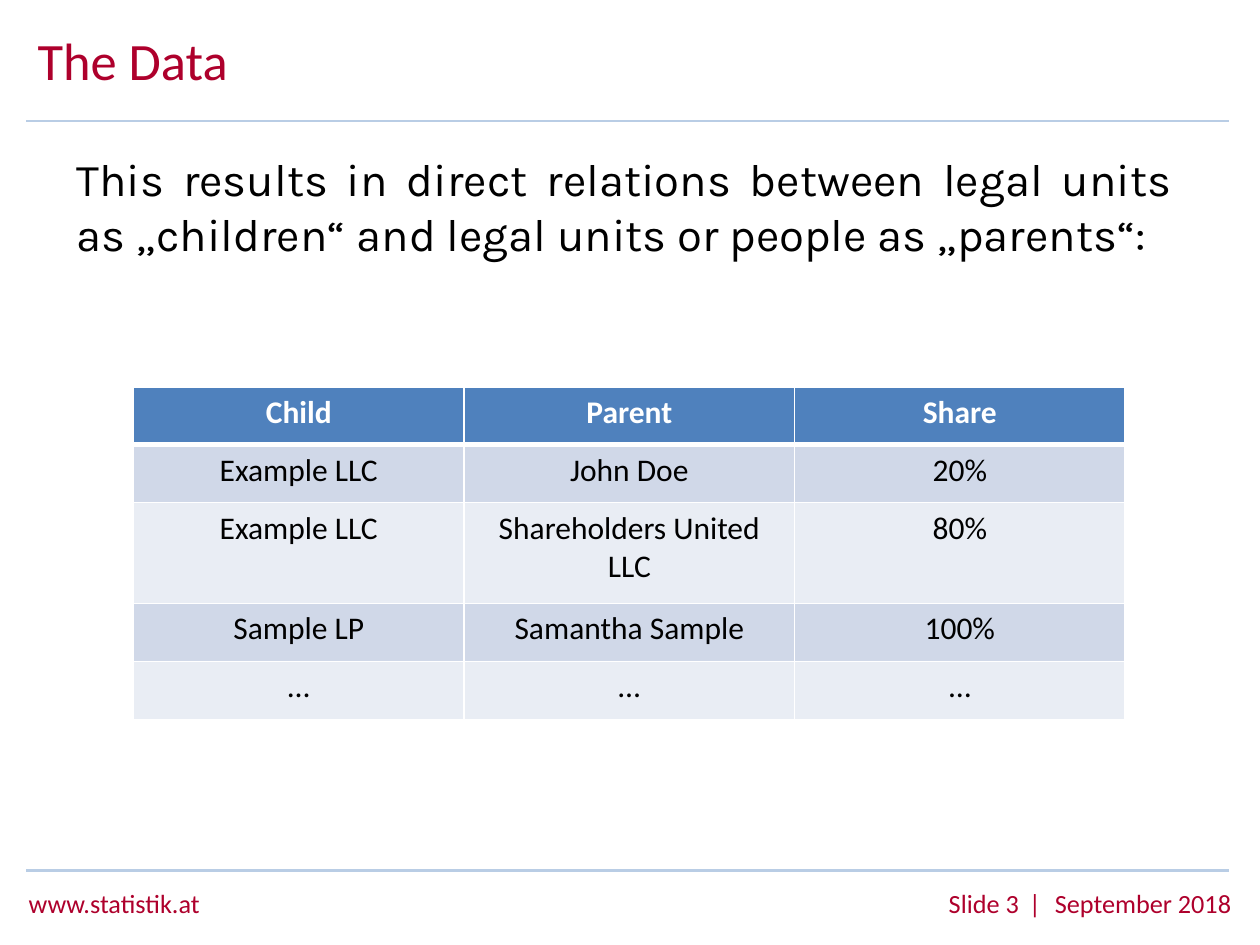
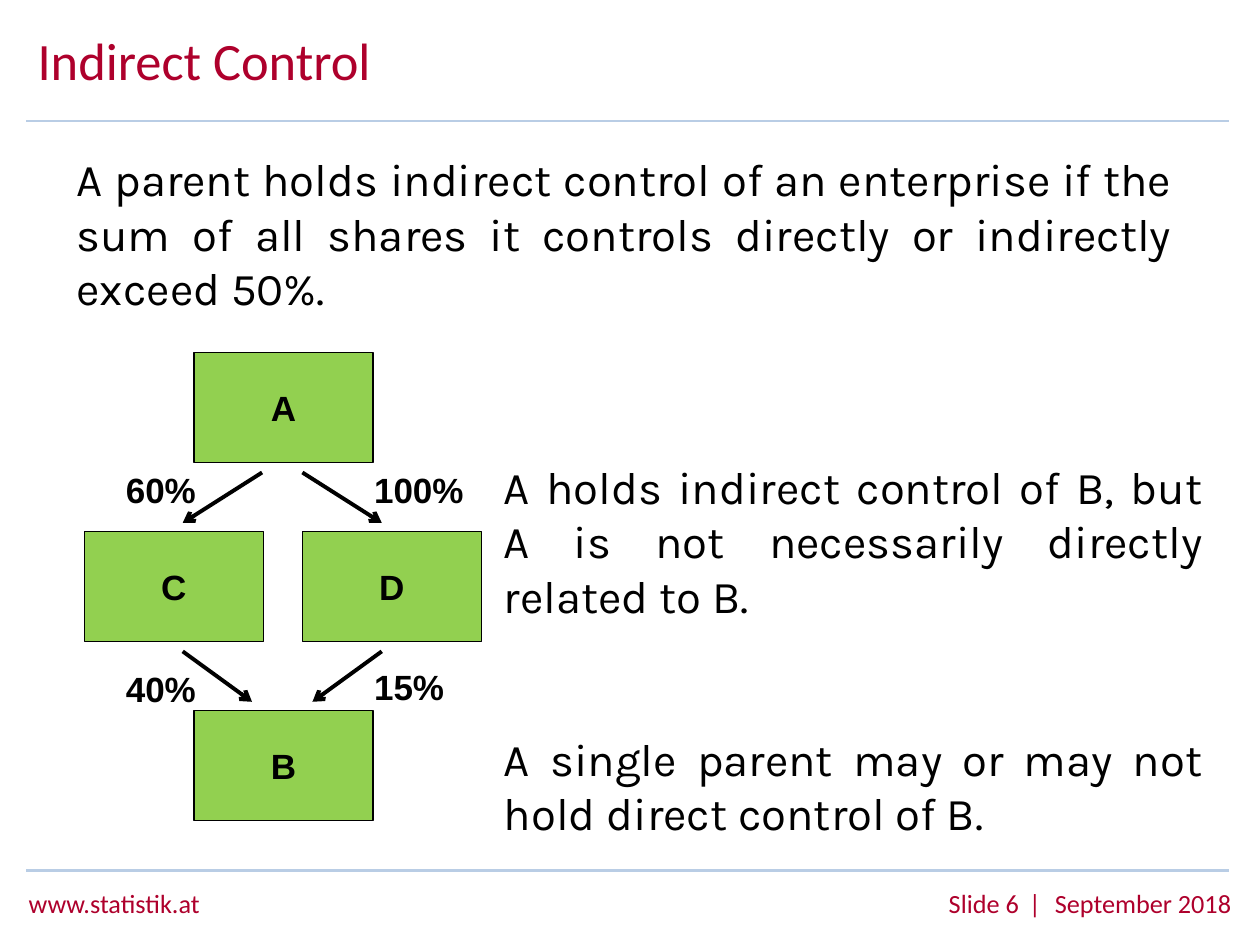
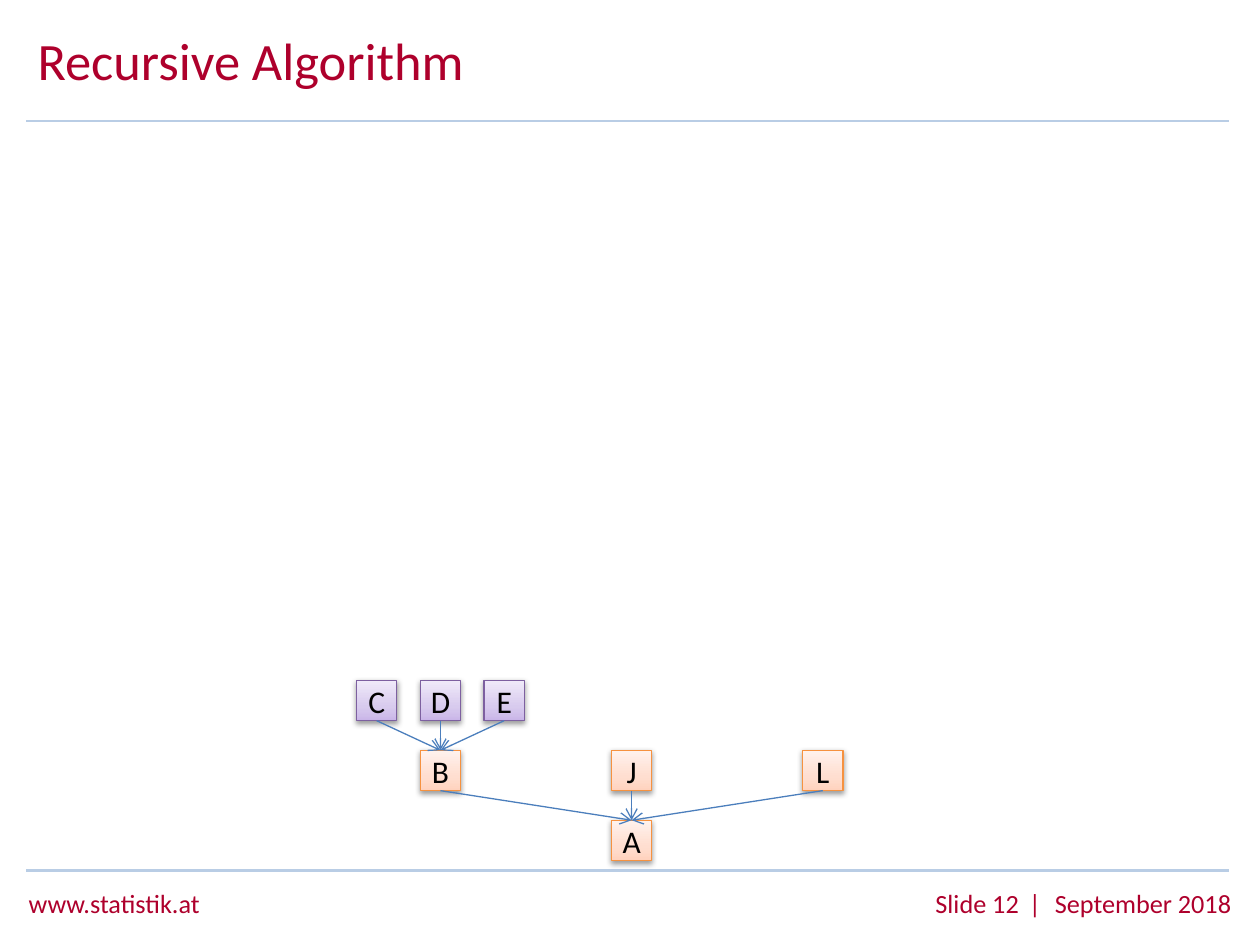
from lxml.etree import SubElement
from pptx import Presentation
from pptx.dml.color import RGBColor
from pptx.enum.shapes import MSO_CONNECTOR, MSO_SHAPE
from pptx.enum.text import MSO_ANCHOR, PP_ALIGN
from pptx.oxml import parse_xml
from pptx.oxml.ns import nsdecls, qn
from pptx.util import Inches, Pt

CRIMSON = RGBColor(0xAE, 0x00, 0x2C)
RULE_BLUE = RGBColor(0xB9, 0xCD, 0xE5)
BLACK = RGBColor(0x00, 0x00, 0x00)
WHITE = RGBColor(0xFF, 0xFF, 0xFF)
HEADER_BLUE = RGBColor(0x4F, 0x81, 0xBD)
BANDS = (RGBColor(0xD0, 0xD8, 0xE8), RGBColor(0xE9, 0xED, 0xF4))
GREEN = RGBColor(0x92, 0xD0, 0x50)
ARROW_BLUE = RGBColor(0x4B, 0x7E, 0xBC)
ORANGE_LINE = RGBColor(0xF6, 0x92, 0x40)
ORANGE_STOPS = (
    RGBColor(0xFF, 0xD2, 0xBD),
    RGBColor(0xFF, 0xDE, 0xD0),
    RGBColor(0xFF, 0xF2, 0xED),
)
PURPLE_LINE = RGBColor(0x7D, 0x60, 0xA0)
PURPLE_STOPS = (
    RGBColor(0xC9, 0xB5, 0xE8),
    RGBColor(0xD8, 0xCB, 0xEE),
    RGBColor(0xF0, 0xEA, 0xF9),
)
STOP_POSITIONS = (0, 35000, 100000)


def write_text(frame, text, *, size, font="Calibri", color=BLACK, bold=False,
               align=PP_ALIGN.LEFT, gap=0, line=None):
    """Fill a text frame, one paragraph per line of text, in one format."""
    for index, content in enumerate(text.split("\n")):
        paragraph = frame.add_paragraph() if index else frame.paragraphs[0]
        paragraph.alignment = align
        if index:
            paragraph.space_before = Pt(gap)
        if line:
            paragraph.line_spacing = Pt(line)
        run = paragraph.add_run()
        run.text = content
        run.font.size = Pt(size)
        run.font.name = font
        run.font.bold = bold
        run.font.color.rgb = color


def add_text(slide, box, text, *, anchor=MSO_ANCHOR.TOP, **style):
    """Add a wrapping text box at the given left, top, width and height."""
    shape = slide.shapes.add_textbox(*map(Inches, box))
    shape.text_frame.word_wrap = True
    shape.text_frame.vertical_anchor = anchor
    write_text(shape.text_frame, text, **style)
    return shape


def add_body(slide, box, text, gap=0):
    """Add justified body copy."""
    add_text(slide, box, text, size=26, font="Karla", align=PP_ALIGN.JUSTIFY, gap=gap)


def add_line(slide, start, end, color, weight, arrow=False):
    """Add a straight line, with an open arrowhead at its end if wanted."""
    connector = slide.shapes.add_connector(
        MSO_CONNECTOR.STRAIGHT, *map(Inches, (*start, *end)))
    connector.line.color.rgb = color
    connector.line.width = Pt(weight)
    if arrow:
        SubElement(connector.line._get_or_add_ln(), qn("a:tailEnd"), type="arrow")
    SubElement(connector._element.spPr, qn("a:effectLst"))


def add_box(slide, box, text, *, fill, outline, **style):
    """Add a thinly outlined rectangle with a centred label."""
    shape = slide.shapes.add_shape(MSO_SHAPE.RECTANGLE, *map(Inches, box))
    shape.shadow.inherit = False
    shape.fill.solid()
    shape.fill.fore_color.rgb = fill
    shape.line.color.rgb = outline
    shape.line.width = Pt(0.75)
    frame = shape.text_frame
    frame.margin_left = frame.margin_right = frame.margin_top = frame.margin_bottom = 0
    frame.vertical_anchor = MSO_ANCHOR.MIDDLE
    write_text(frame, text, align=PP_ALIGN.CENTER, **style)
    return shape


def add_depth(shape, colors):
    """Give a rectangle an upward gradient and a soft shadow below."""
    properties = shape._element.spPr
    stops = "".join(
        f'<a:gs pos="{position}"><a:srgbClr val="{color}"/></a:gs>'
        for position, color in zip(STOP_POSITIONS, colors))
    gradient = parse_xml(
        f'<a:gradFill {nsdecls("a")} rotWithShape="1"><a:gsLst>{stops}</a:gsLst>'
        '<a:lin ang="16200000" scaled="1"/></a:gradFill>')
    properties.replace(properties.find(qn("a:solidFill")), gradient)
    properties.find(qn("a:effectLst")).append(parse_xml(
        f'<a:outerShdw {nsdecls("a")} blurRad="40000" dist="20000" dir="5400000" '
        'rotWithShape="0"><a:srgbClr val="000000"><a:alpha val="38000"/>'
        '</a:srgbClr></a:outerShdw>'))


def add_footer(slide, number):
    """Add the web address and the slide number with its date."""
    style = {"size": 15, "color": CRIMSON}
    add_text(slide, (0.13, 6.99, 2.27, 0.35), "www.statistik.at", **style)
    label = add_text(slide, (6.25, 6.99, 3.62, 0.35), f"Slide {number}",
                     align=PP_ALIGN.RIGHT, **style)
    paragraph = label.text_frame.paragraphs[0]
    for text, spacing in ((" | ", "226"), ("September 2018", "0")):
        run = paragraph.add_run()
        run.text = text
        run.font.size = Pt(15)
        run.font.name = "Calibri"
        run.font.color.rgb = CRIMSON
        run.font._element.set("spc", spacing)


def add_page(presentation, title, number):
    """Start a slide with its title, rules and footer."""
    slide = presentation.slides.add_slide(presentation.slide_layouts[6])
    add_footer(slide, number)
    for top in (0.96, 6.91):
        add_line(slide, (0.21, top), (9.75, top), RULE_BLUE, 1.5)
    add_text(slide, (0.2, 0.25, 7.63, 0.53), title, size=30, color=CRIMSON,
             line=30, anchor=MSO_ANCHOR.MIDDLE)
    return slide


def set_borders(cell, **weights):
    """Draw white cell borders, with weights in points by side."""
    properties = cell._tc.get_or_add_tcPr()
    for side in "LRTB":
        properties.append(parse_xml(
            f'<a:ln{side} {nsdecls("a")} w="{Pt(weights.get(side, 1))}"><a:solidFill>'
            f'<a:srgbClr val="{WHITE}"/></a:solidFill></a:ln{side}>'))


def add_share_table(slide, box, rows, heights):
    """Add the banded table of children, parents and shares."""
    table = slide.shapes.add_table(len(rows), len(rows[0]), *map(Inches, box)).table
    for column in table.columns:
        column.width = Inches(box[2] / len(rows[0]))
    for index, (values, height) in enumerate(zip(rows, heights)):
        header = index == 0
        table.rows[index].height = Inches(height)
        for cell, value in zip(table.rows[index].cells, values):
            set_borders(cell, B=3 if header else 1, T=3 if index == 1 else 1)
            cell.fill.solid()
            cell.fill.fore_color.rgb = HEADER_BLUE if header else BANDS[(index - 1) % 2]
            write_text(cell.text_frame, value, size=18, bold=header,
                       color=WHITE if header else BLACK, align=PP_ALIGN.CENTER)


def add_control_diagram(slide, left, top):
    """Add the diamond of enterprises with arrows and share labels."""
    width, height, pitch, center = 1.42, 0.87, 1.42, 1.57
    style = {"size": 20, "font": "Arial", "bold": True}
    for name, x, row in (("A", 0.87, 0), ("C", 0, 1), ("D", 1.73, 1), ("B", 0.87, 2)):
        add_box(slide, (left + x, top + row * pitch, width, height), name,
                fill=GREEN, outline=BLACK, **style)
    for row, start, end in ((0, 0.16, 0.79), (1, 0.79, 0.24)):
        y = top + row * pitch + height + 0.08
        for side in (-1, 1):
            add_line(slide, (left + center + side * start, y),
                     (left + center + side * end, y + 0.4), BLACK, 2.25, arrow=True)
    for share, x, y in (("60%", 0.23, 0.87), ("100%", 2.2, 0.87),
                        ("40%", 0.23, 2.45), ("15%", 2.2, 2.43)):
        add_text(slide, (left + x, top + y, 1.02, 0.43), share, **style)


def add_tree(slide, box):
    """Add the ownership tree on a grid of seven columns and two rows."""
    left, top, width, height = box
    size = 0.32
    orange, purple = (ORANGE_LINE, ORANGE_STOPS), (PURPLE_LINE, PURPLE_STOPS)
    nodes = {
        "A": (4, 2, orange, None),
        "J": (4, 1, orange, "A"),
        "L": (7, 1, orange, "A"),
        "B": (1, 1, orange, "A"),
        "E": (2, 0, purple, "B"),
        "C": (0, 0, purple, "B"),
        "D": (1, 0, purple, "B"),
    }
    corners = {name: (left + column * width / 7, top + row * height / 2)
               for name, (column, row, _, _) in nodes.items()}
    for name, (_, _, (outline, stops), _) in nodes.items():
        shape = add_box(slide, (*corners[name], size, size), name, size=18,
                        fill=stops[0], outline=outline)
        add_depth(shape, stops)
    for name, (_, _, _, target) in nodes.items():
        if target:
            (x, y), (target_x, target_y) = corners[name], corners[target]
            add_line(slide, (x + size / 2, y + size), (target_x + size / 2, target_y),
                     ARROW_BLUE, 0.75, arrow=True)


def build_data(presentation):
    """Build the slide on the data."""
    slide = add_page(presentation, "The Data", 3)
    add_body(slide, (0.51, 1.15, 8.9, 4.04),
             "This results in direct relations between legal units as „children“ "
             "and legal units or people as „parents“:")
    rows = (
        ("Child", "Parent", "Share"),
        ("Example LLC", "John Doe", "20%"),
        ("Example LLC", "Shareholders United LLC", "80%"),
        ("Sample LP", "Samantha Sample", "100%"),
        ("…", "…", "…"),
    )
    add_share_table(slide, (1.06, 3.07, 7.87, 2.64), rows, (0.46, 0.46, 0.8, 0.46, 0.46))


def build_indirect_control(presentation):
    """Build the slide on indirect control."""
    slide = add_page(presentation, "Indirect Control", 6)
    add_body(slide, (0.51, 1.15, 8.9, 1.41),
             "A parent holds indirect control of an enterprise if the sum of all "
             "shares it controls directly or indirectly exceed 50%.")
    add_control_diagram(slide, 0.67, 2.8)
    add_body(slide, (3.9, 3.59, 5.75, 3.16),
             "A holds indirect control of B, but A is not necessarily directly "
             "related to B.\nA single parent may or may not hold direct control of B.",
             gap=62)


def build_recursive_algorithm(presentation):
    """Build the slide on the recursive algorithm."""
    slide = add_page(presentation, "Recursive Algorithm", 12)
    add_tree(slide, (2.83, 5.4, 3.54, 1.11))


def main():
    """Build and save the presentation."""
    presentation = Presentation()
    presentation.slide_width = Inches(10)
    presentation.slide_height = Inches(7.5)
    build_data(presentation)
    build_indirect_control(presentation)
    build_recursive_algorithm(presentation)
    presentation.save("out.pptx")


if __name__ == "__main__":
    main()
